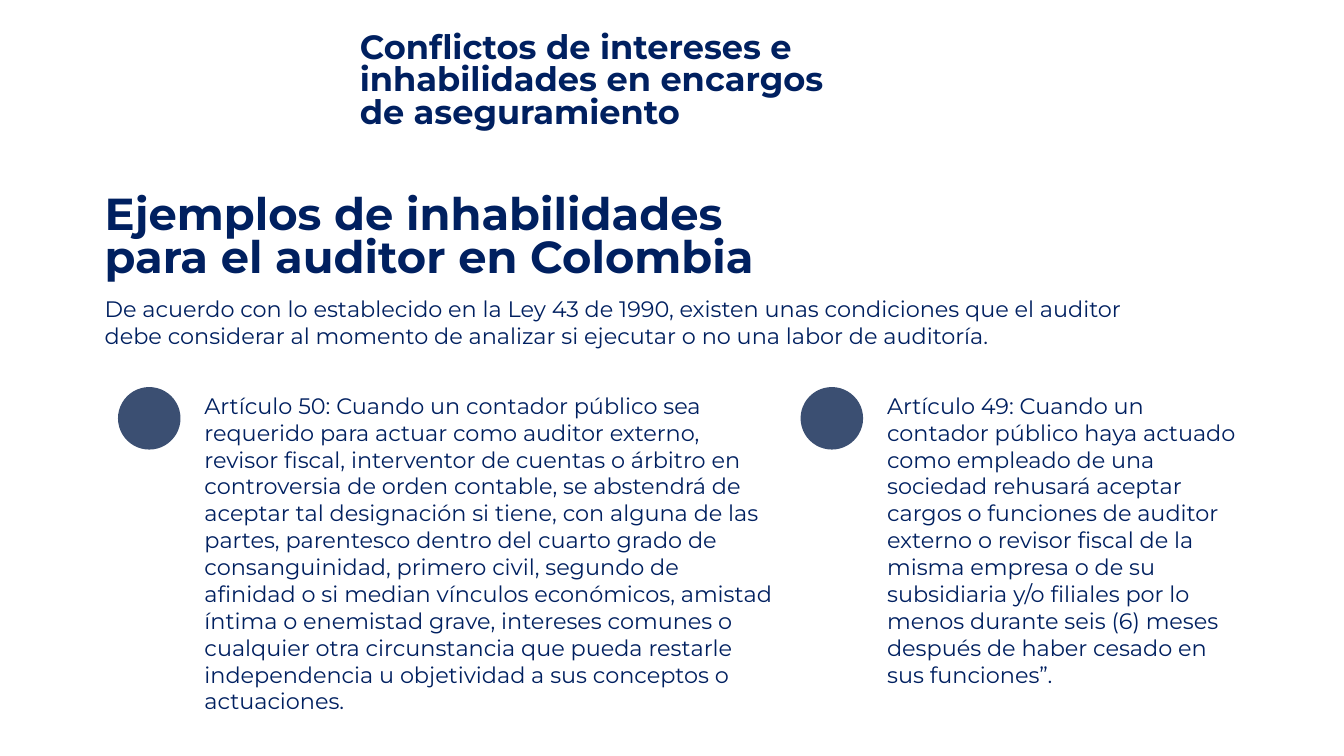
from pptx import Presentation
from pptx.dml.color import RGBColor
from pptx.enum.shapes import MSO_SHAPE as Shape
from pptx.enum.text import MSO_ANCHOR as Anchor, MSO_AUTO_SIZE as Fit
from pptx.util import Inches, Pt

NAVY = RGBColor(0x00, 0x20, 0x60)
SLATE = RGBColor(0x3B, 0x4F, 0x72)


class Page:
    """Holds the style and the current slide, and draws its elements."""

    font = "Montserrat"
    dot_size = 0.62

    def __init__(self, slide):
        self.slide = slide

    def text(self, words, left, top, width, height, size):
        box = self.slide.shapes.add_textbox(
            Inches(left), Inches(top), Inches(width), Inches(height))
        frame = box.text_frame
        frame.word_wrap = True
        para = frame.paragraphs[0]
        para.text = words
        para.font.name = self.font
        para.font.size = Pt(size)
        para.font.color.rgb = NAVY
        return frame, para

    def title(self, words, left, top, width, size):
        frame, para = self.text(words, left, top, width, 1.45, size)
        frame.auto_size = Fit.NONE
        frame.vertical_anchor = Anchor.MIDDLE
        para.line_spacing = 0.8
        para.font.bold = True

    def body(self, words, left, top, width, height):
        frame, para = self.text(words, left, top, width, height, 16)
        frame.auto_size = Fit.SHAPE_TO_FIT_TEXT
        para.space_after = Pt(15)

    def dot(self, left, top):
        side = Inches(self.dot_size)
        dot = self.slide.shapes.add_shape(
            Shape.OVAL, Inches(left), Inches(top), side, side)
        dot.shadow.inherit = False
        dot.fill.solid()
        dot.fill.fore_color.rgb = SLATE
        dot.line.fill.background()

    def item(self, words, left, width, height):
        top = 3.84
        self.dot(left, top)
        self.body(words, left + 0.76, top, width, height)


def main():
    deck = Presentation()
    deck.slide_width = Inches(13.33)
    deck.slide_height = Inches(7.5)
    page = Page(deck.slides.add_slide(deck.slide_layouts[6]))

    page.body(
        "De acuerdo con lo establecido en la Ley 43 de 1990, existen unas "
        "condiciones que el auditor debe considerar al momento de analizar "
        "si ejecutar o no una labor de auditoría.",
        0.94, 2.88, 10.91, 0.64)
    page.title(
        "Conflictos de intereses e inhabilidades en encargos de aseguramiento",
        3.47, 0.09, 5.15, 24)
    page.title(
        "Ejemplos de inhabilidades para el auditor en Colombia",
        0.94, 1.65, 7.41, 32)
    page.item(
        "Artículo 50: Cuando un contador público sea requerido para actuar "
        "como auditor externo, revisor fiscal, interventor de cuentas o "
        "árbitro en controversia de orden contable, se abstendrá de aceptar "
        "tal designación si tiene, con alguna de las partes, parentesco "
        "dentro del cuarto grado de consanguinidad, primero civil, segundo "
        "de afinidad o si median vínculos económicos, amistad íntima o "
        "enemistad grave, intereses comunes o cualquier otra circunstancia "
        "que pueda restarle independencia u objetividad a sus conceptos o "
        "actuaciones.",
        1.17, 5.86, 3.33)
    page.item(
        "Artículo 49: Cuando un contador público haya actuado como empleado "
        "de una sociedad rehusará aceptar cargos o funciones de auditor "
        "externo o revisor fiscal de la misma empresa o de su subsidiaria "
        "y/o filiales por lo menos durante seis (6) meses después de haber "
        "cesado en sus funciones”.",
        7.94, 3.71, 3.06)

    deck.save("out.pptx")


if __name__ == "__main__":
    main()
